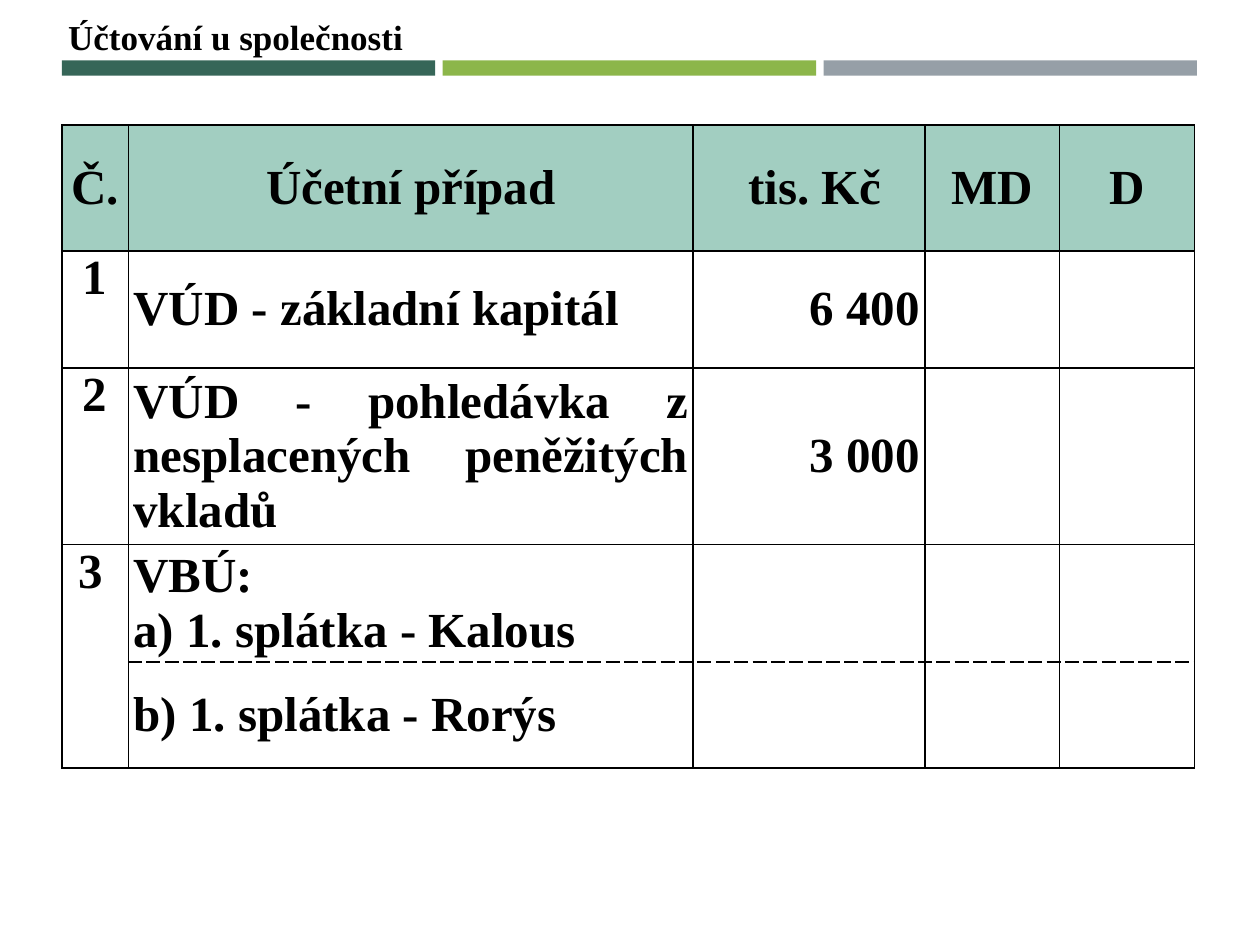
from dataclasses import dataclass

from lxml.etree import SubElement as Sub
from pptx import Presentation
from pptx.dml.color import RGBColor as RGB
from pptx.enum.shapes import MSO_SHAPE as Shape
from pptx.enum.text import MSO_ANCHOR as Anchor, MSO_AUTO_SIZE as Fit, PP_ALIGN as Align
from pptx.oxml.ns import qn
from pptx.util import Inches, Pt


@dataclass(frozen=True)
class Theme:
    font: str = "Times New Roman"
    ink: str = "000000"
    head: str = "A2CEC1"
    bars: tuple = ("366658", "8CB64A", "969FA7")
    title: int = 20
    body: int = 28
    rule: int = 1


THEME = Theme()
COLS = (0.53, 4.48, 1.84, 1.07, 1.07)
ROWS = (1, 0.93, 1.4, 0.93, 0.84)
DATA = (
    ("Č.", "Účetní případ", " tis. Kč", "MD", "D"),
    ("1", "VÚD - základní kapitál", "6 400", "", ""),
    ("2", "VÚD - pohledávka z nesplacených peněžitých vkladů", "3 000", "", ""),
    (" 3", "VBÚ:\na) 1. splátka - Kalous ", "", "", ""),
    ("", "b) 1. splátka - Rorýs ", "", "", ""),
)
ALIGNS = (Align.CENTER, Align.JUSTIFY, Align.RIGHT, Align.CENTER, Align.CENTER)
SPLIT = 3  # row whose lower edge is dashed


def style(frame, size, align):
    for para in frame.paragraphs:
        para.alignment = align
        for run in para.runs:
            font = run.font
            font.name, font.size, font.bold = THEME.font, Pt(size), True
            font.color.rgb = RGB.from_string(THEME.ink)


def add_title(slide, left, top, width, height):
    title = slide.shapes.title
    title.left, title.top = Inches(left), Inches(top)
    title.width, title.height = Inches(width), Inches(height)
    frame = title.text_frame
    frame.text = "Účtování u společnosti"
    frame.word_wrap = False
    frame.auto_size = Fit.SHAPE_TO_FIT_TEXT
    frame.vertical_anchor = Anchor.TOP
    style(frame, THEME.title, Align.LEFT)


def add_bars(slide, left, top, width, height, gap=0.06):
    """Three equal bars across the box."""
    count = len(THEME.bars)
    size = (width - gap * (count - 1)) / count
    for i, color in enumerate(THEME.bars):
        bar = slide.shapes.add_shape(
            Shape.RECTANGLE, Inches(left + i * (size + gap)), Inches(top),
            Inches(size), Inches(height))
        bar.shadow.inherit = False
        bar.fill.solid()
        bar.fill.fore_color.rgb = RGB.from_string(color)
        bar.line.fill.background()


def add_rules(cell, dashed):
    """Draw the four borders; the sides in dashed are broken lines."""
    props = cell._tc.get_or_add_tcPr()
    for side in "LRTB":
        line = Sub(props, qn(f"a:ln{side}"), w=str(Pt(THEME.rule)))
        Sub(Sub(line, qn("a:solidFill")), qn("a:srgbClr"), val=THEME.ink)
        Sub(line, qn("a:prstDash"), val="dash" if side in dashed else "solid")


def fill_cell(cell, text, row, col):
    dashed = {SPLIT: "B", SPLIT + 1: "T"}.get(row, "") if col else ""
    add_rules(cell, dashed)
    cell.margin_left = cell.margin_right = Inches(0.04)
    cell.margin_top = cell.margin_bottom = 0
    if row == 0:
        cell.fill.solid()
        cell.fill.fore_color.rgb = RGB.from_string(THEME.head)
    else:
        cell.fill.background()
    # Row numbers sit at the top, the rest in the middle
    cell.vertical_anchor = Anchor.TOP if row and not col else Anchor.MIDDLE
    if text:
        align = ALIGNS[col] if row else Align.CENTER
        if row == SPLIT and col == 0:
            align = Align.LEFT
        cell.text_frame.text = text
        style(cell.text_frame, THEME.body, align)


def add_ledger(slide, left, top, width, height):
    table = slide.shapes.add_table(
        len(ROWS), len(COLS), Inches(left), Inches(top),
        Inches(width), Inches(height)).table
    table.horz_banding = table.first_row = False
    for col, size in zip(table.columns, COLS):
        col.width = Inches(size)
    for row, size in zip(table.rows, ROWS):
        row.height = Inches(size)
    for r, line in enumerate(DATA):
        for c, text in enumerate(line):
            fill_cell(table.cell(r, c), text, r, c)
    # The third entry spans both instalments
    table.cell(SPLIT, 0).merge(table.cell(SPLIT + 1, 0))


def main():
    deck = Presentation()
    deck.slide_width, deck.slide_height = Inches(10), Inches(7.5)
    slide = deck.slides.add_slide(deck.slide_layouts[5])
    add_bars(slide, 0.49, 0.48, 9.01, 0.12)
    add_title(slide, 0.44, 0.07, 2.88, 0.44)
    add_ledger(slide, 0.49, 0.99, sum(COLS), sum(ROWS))
    deck.save("out.pptx")


if __name__ == "__main__":
    main()
